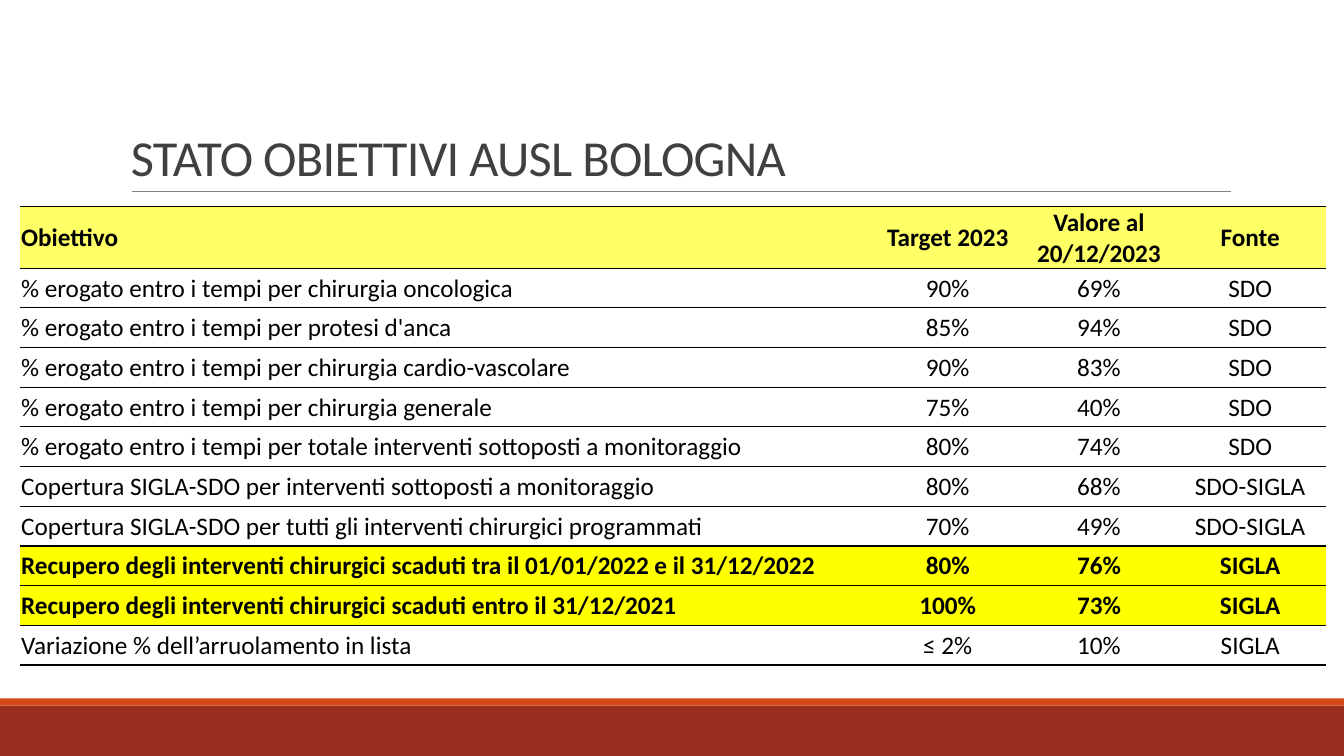
from typing import NamedTuple

from lxml.etree import SubElement as Sub
from pptx import Presentation
from pptx.dml.color import RGBColor as Rgb
from pptx.enum.shapes import MSO_CONNECTOR as Link, MSO_SHAPE as Form
from pptx.enum.text import MSO_ANCHOR as Anchor, PP_ALIGN as Align
from pptx.oxml.ns import qn
from pptx.util import Inches, Pt

HUES = {
    "ink": "000000", "title": "404040", "rule": "808080",
    "base": "9B2D1F", "edge": "D34817",
    "head": "FFFF66", "mark": "FFFF00",
}
WIDE, HIGH = 13.33, 7.5
COLS = (8.45, 1.5, 1.5, 1.5)
LEFT, TOP, TALL, HEAD = 0.2, 2.05, 4.55, 0.61
CELL = {
    "margin_left": Inches(0.01), "margin_right": Inches(0.01),
    "margin_top": Inches(0.01), "margin_bottom": Inches(0),
    "vertical_anchor": Anchor.MIDDLE,
}
PLAIN = {"first_row": False, "horz_banding": False}


class Band(NamedTuple):
    top: float
    tall: float
    hue: str


class Goal(NamedTuple):
    name: str
    target: str
    value: str
    source: str
    hue: str = ""


BANDS = (Band(7, 0.5, "base"), Band(6.93, 0.07, "edge"))
GOALS = (
    Goal("Obiettivo", "Target 2023", "Valore al 20/12/2023", "Fonte", "head"),
    Goal("% erogato entro i tempi per chirurgia oncologica", "90%", "69%", "SDO"),
    Goal("% erogato entro i tempi per protesi d'anca", "85%", "94%", "SDO"),
    Goal("% erogato entro i tempi per chirurgia cardio-vascolare", "90%", "83%", "SDO"),
    Goal("% erogato entro i tempi per chirurgia generale", "75%", "40%", "SDO"),
    Goal("% erogato entro i tempi per totale interventi sottoposti a monitoraggio",
         "80%", "74%", "SDO"),
    Goal("Copertura SIGLA-SDO per interventi sottoposti a monitoraggio",
         "80%", "68%", "SDO-SIGLA"),
    Goal("Copertura SIGLA-SDO per tutti gli interventi chirurgici programmati",
         "70%", "49%", "SDO-SIGLA"),
    Goal("Recupero degli interventi chirurgici scaduti tra il 01/01/2022 e il 31/12/2022",
         "80%", "76%", "SIGLA", "mark"),
    Goal("Recupero degli interventi chirurgici scaduti entro il 31/12/2021",
         "100%", "73%", "SIGLA", "mark"),
    Goal("Variazione % dell’arruolamento in lista", "≤ 2%", "10%", "SIGLA"),
)


def tint(hue: str) -> Rgb:
    return Rgb.from_string(HUES[hue])


def apply(item, look: dict) -> None:
    for key, val in look.items():
        setattr(item, key, val)


def write(para, text: str, size: float, hue: str, bold: bool = False):
    run = para.add_run()
    run.text = text
    apply(run.font, {"name": "Calibri", "size": Pt(size), "bold": bold})
    run.font.color.rgb = tint(hue)
    return run


def draw_band(slide, band: Band) -> None:
    box = slide.shapes.add_shape(Form.RECTANGLE, 0, Inches(band.top),
                                 Inches(WIDE), Inches(band.tall))
    box.shadow.inherit = False
    box.fill.solid()
    box.fill.fore_color.rgb = tint(band.hue)
    box.line.fill.background()


def draw_title(slide) -> None:
    y = Inches(1.9)
    rule = slide.shapes.add_connector(Link.STRAIGHT, Inches(1.31), y, Inches(12.21), y)
    rule.line.width = Pt(0.5)
    rule.line.color.rgb = tint("rule")
    Sub(rule._element.spPr, qn("a:effectLst"))

    box = slide.shapes.add_textbox(Inches(1.2), Inches(0.31), Inches(11), Inches(1.59))
    frame = box.text_frame
    apply(frame, {"word_wrap": True, "vertical_anchor": Anchor.BOTTOM})
    para = frame.paragraphs[0]
    para.line_spacing = 0.85
    run = write(para, "STATO OBIETTIVI AUSL BOLOGNA", 36, "title")
    run._r.get_or_add_rPr().set("spc", "-50")


def draw_edges(cell) -> None:
    props = cell._tc.get_or_add_tcPr()
    for side in "LRTB":
        line = Sub(props, qn(f"a:ln{side}"), w=str(Pt(1)))
        if side in "LR":
            Sub(line, qn("a:noFill"))
        else:
            Sub(Sub(line, qn("a:solidFill")), qn("a:srgbClr"), val=HUES["ink"])


def draw_cell(cell, text: str, hue: str, align: Align) -> None:
    apply(cell, CELL)
    draw_edges(cell)
    if hue:
        cell.fill.solid()
        cell.fill.fore_color.rgb = tint(hue)
    else:
        cell.fill.background()
    para = cell.text_frame.paragraphs[0]
    para.alignment = align
    write(para, text, 18, "ink", bold=bool(hue))


def draw_table(slide) -> None:
    table = slide.shapes.add_table(len(GOALS), len(COLS), Inches(LEFT), Inches(TOP),
                                   Inches(sum(COLS)), Inches(TALL)).table
    apply(table, PLAIN)
    for col, wide in zip(table.columns, COLS):
        col.width = Inches(wide)
    step = (TALL - HEAD) / (len(GOALS) - 1)
    for r, goal in enumerate(GOALS):
        table.rows[r].height = Inches(step if r else HEAD)
        for c, text in enumerate(goal[:len(COLS)]):
            align = Align.CENTER if c else Align.LEFT
            draw_cell(table.cell(r, c), text, goal.hue, align)


def main() -> None:
    deck = Presentation()
    apply(deck, {"slide_width": Inches(WIDE), "slide_height": Inches(HIGH)})
    slide = deck.slides.add_slide(deck.slide_layouts[6])
    # Footer bands
    for band in BANDS:
        draw_band(slide, band)
    # Title and its rule
    draw_title(slide)
    # Goals
    draw_table(slide)
    deck.save("out.pptx")


if __name__ == "__main__":
    main()
